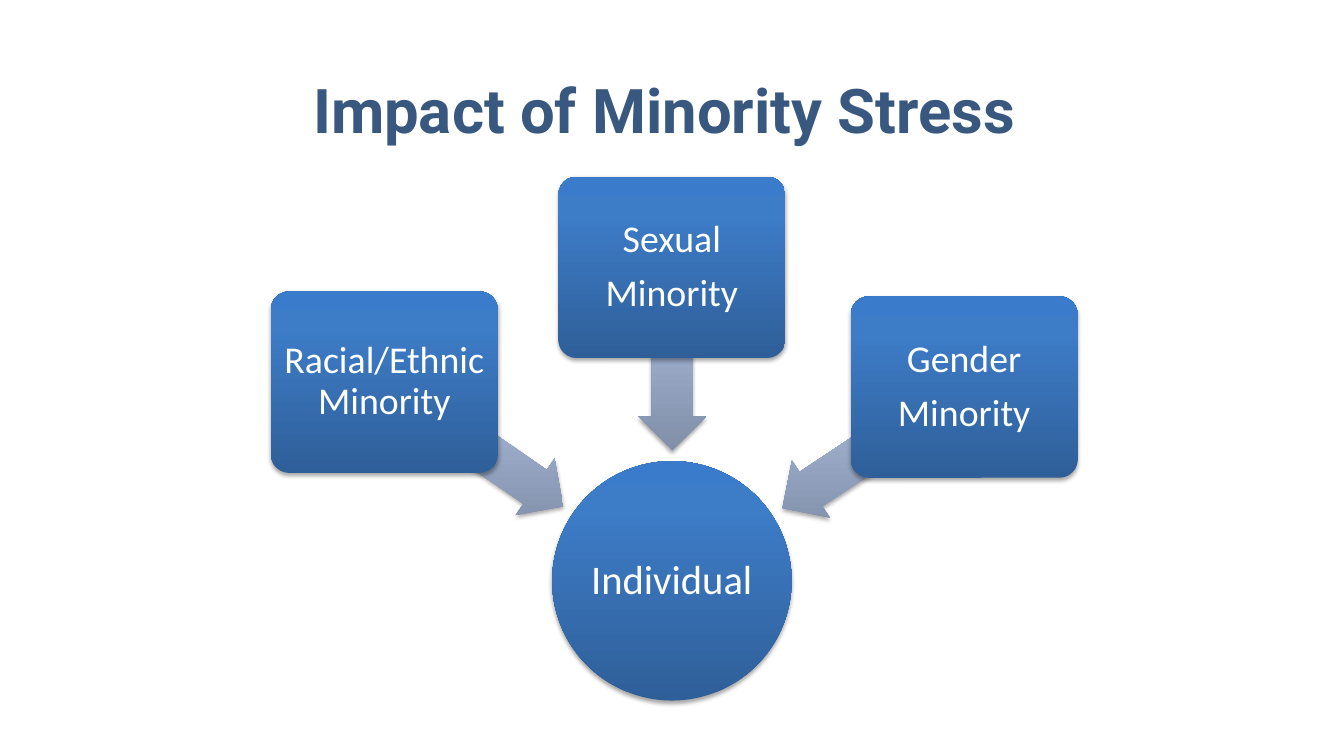
"""Build a slide on the impact of minority stress, as a converging diagram."""
from dataclasses import dataclass

from lxml.etree import SubElement
from pptx import Presentation
from pptx.dml.color import RGBColor
from pptx.enum.shapes import MSO_SHAPE as Shape
from pptx.enum.text import MSO_ANCHOR as Anchor, PP_ALIGN as Align
from pptx.oxml import parse_xml
from pptx.oxml.ns import nsdecls, qn
from pptx.util import Pt

COLORS = {
    "title": "39587F", "text": "FFFFFF", "shadow": "000000",
    "node_dark": "2F5F99", "node_mid": "3D7CC7", "node_light": "3A7CCB",
    "arrow_dark": "818FA8", "arrow_mid": "A7B9DA", "arrow_light": "A7BADC",
}
BOX_W, BOX_H, ARROW_H = 162, 129.6, 49


@dataclass
class Node:
    kind: Shape
    left: float
    top: float
    width: float
    height: float
    lines: tuple[str, ...]
    size: float
    inset: float


@dataclass
class Arrow:
    left: float
    top: float
    width: float
    rotation: float


def box(left: float, top: float, *lines: str) -> Node:
    """Describe one minority group's box."""
    return Node(Shape.ROUNDED_RECTANGLE, left, top, BOX_W, BOX_H, lines, 27, 4.3)


INDIVIDUAL = Node(Shape.OVAL, 394.4, 329.4, 171, 171, ("Individual",), 29, 1.4)
GROUPS = [
    (Arrow(260.6, 293, 155.5, 214.6), box(193.5, 208.2, "Racial/Ethnic Minority")),
    (Arrow(414.7, 231.8, 131, 270), box(398.9, 126.2, "Sexual", "Minority")),
    (Arrow(545.8, 295.2, 156.2, 326.4), box(607.7, 211.7, "Gender", "Minority")),
]


def style(sp, palette: str) -> None:
    """Give a shape an upright gradient, no outline and a soft shadow."""
    sp.shadow.inherit = False
    sp.line.fill.background()
    stops = "".join(
        f'<a:gs pos="{pos}"><a:srgbClr val="{COLORS[f"{palette}_{tone}"]}"/></a:gs>'
        for pos, tone in ((0, "dark"), (80000, "mid"), (100000, "light"))
    )
    grad = parse_xml(
        f'<a:gradFill {nsdecls("a")} rotWithShape="0"><a:gsLst>{stops}</a:gsLst>'
        '<a:lin ang="16200000" scaled="0"/></a:gradFill>'
    )
    props = sp.element.spPr
    props.find(qn("a:prstGeom")).addnext(grad)
    shadow = SubElement(
        props.find(qn("a:effectLst")), qn("a:outerShdw"),
        blurRad=str(Pt(3.1)), dist=str(Pt(1.8)), dir="5400000", rotWithShape="0",
    )
    color = SubElement(shadow, qn("a:srgbClr"), val=COLORS["shadow"])
    SubElement(color, qn("a:alpha"), val="35000")


def add_run(p, text: str, font: str, size: float, color: str, bold: bool = False) -> None:
    """Add one centred run of text."""
    p.alignment = Align.CENTER
    r = p.add_run()
    r.text = text
    r.font.name, r.font.size, r.font.bold = font, Pt(size), bold
    r.font.color.rgb = RGBColor.from_string(COLORS[color])


def add_title(s, text: str) -> None:
    """Add the slide title."""
    tf = s.shapes.add_textbox(Pt(20.9), Pt(18), Pt(918.7), Pt(120.2)).text_frame
    tf.word_wrap = True
    tf.vertical_anchor = Anchor.MIDDLE
    add_run(tf.paragraphs[0], text, "Roboto", 44, "title", True)


def add_node(s, node: Node) -> None:
    """Draw a labelled box or circle."""
    sp = s.shapes.add_shape(
        node.kind, Pt(node.left), Pt(node.top), Pt(node.width), Pt(node.height))
    if node.kind == Shape.ROUNDED_RECTANGLE:
        sp.adjustments[0] = 0.1
    style(sp, "node")
    tf = sp.text_frame
    tf.word_wrap = True
    tf.vertical_anchor = Anchor.MIDDLE
    tf.margin_left = tf.margin_right = tf.margin_top = tf.margin_bottom = Pt(node.inset)
    for i, line in enumerate(node.lines):
        p = tf.add_paragraph() if i else tf.paragraphs[0]
        p.line_spacing = 0.9
        p.space_after = Pt(round(node.size * 0.35, 1))
        add_run(p, line, "Calibri", node.size, "text")


def add_arrow(s, arrow: Arrow) -> None:
    """Draw an arrow from a group towards the individual."""
    sp = s.shapes.add_shape(
        Shape.LEFT_ARROW, Pt(arrow.left), Pt(arrow.top), Pt(arrow.width), Pt(ARROW_H))
    sp.adjustments[0], sp.adjustments[1] = 0.6, 0.5
    sp.rotation = arrow.rotation
    style(sp, "arrow")


def main() -> None:
    """Build and save the slide."""
    prs = Presentation()
    prs.slide_width, prs.slide_height = Pt(960), Pt(540)
    s = prs.slides.add_slide(prs.slide_layouts[6])
    add_title(s, "Impact of Minority Stress ")
    add_node(s, INDIVIDUAL)
    for arrow, node in GROUPS:
        add_arrow(s, arrow)
        add_node(s, node)
    prs.save("out.pptx")


if __name__ == "__main__":
    main()
